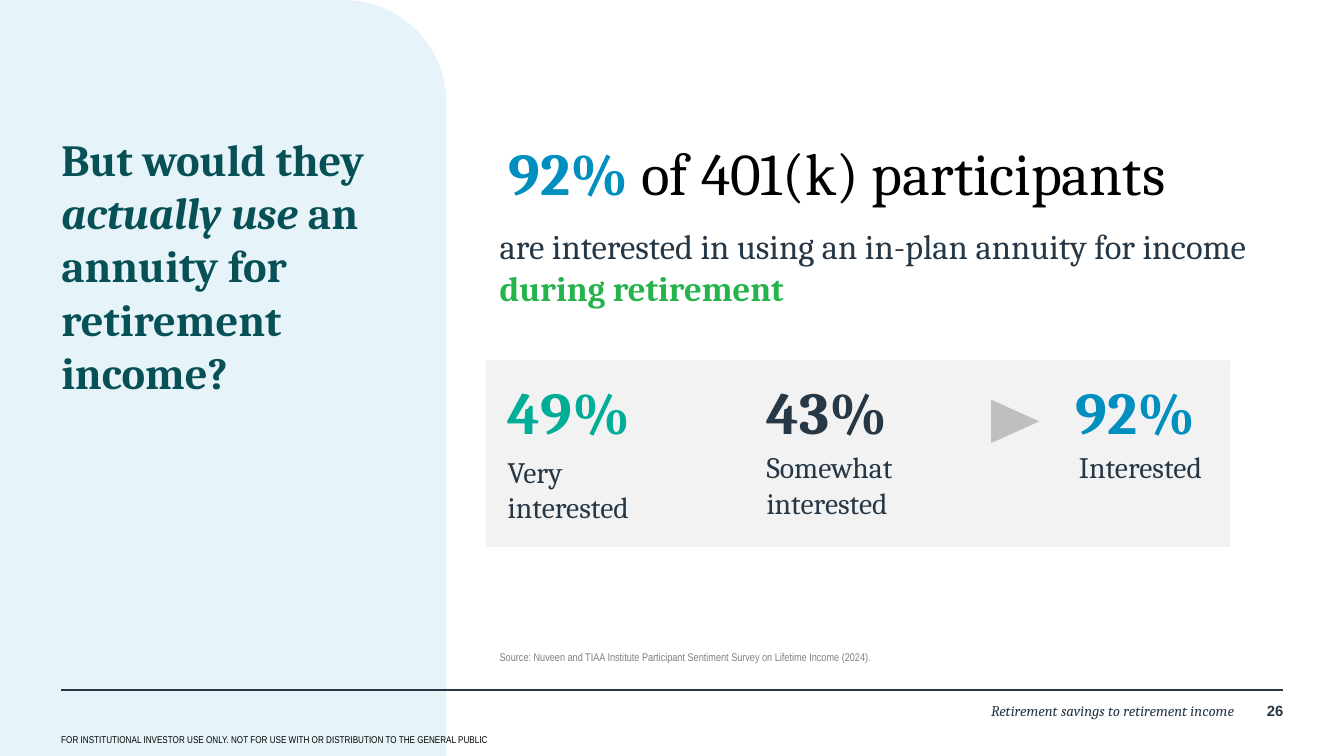
import pptx
import pptx.util
import pptx.dml.color
import pptx.enum.text
import pptx.enum.shapes
import pptx.oxml
import pptx.oxml.ns
from dataclasses import dataclass

Cm, Pt = pptx.util.Cm, pptx.util.Pt
Align, Anchor = pptx.enum.text.PP_ALIGN, pptx.enum.text.MSO_ANCHOR
Shape = pptx.enum.shapes.MSO_SHAPE


@dataclass(frozen=True)
class Theme:
    serif: str = "Cambria"
    sans: str = "Arial"
    narrow: str = "Arial Narrow"
    ink: str = "263746"
    black: str = "000000"
    deep: str = "075156"
    blue: str = "008FBE"
    green: str = "25B34B"
    teal: str = "00AD97"
    gray: str = "808080"
    arrow: str = "BFBFBF"
    panel: str = "F2F2F2"
    pale: str = "E6F4F9"
    big: int = 48
    title: int = 36
    body: int = 28
    label: int = 24
    foot: int = 12
    source: int = 9
    legal: int = 8


T = Theme()

# Content: each run is (text, colour, style), style being "b", "i", both or none
TITLE = [("But would they ", T.deep, "b"), ("actually use ", T.deep, "bi"),
         ("an annuity for retirement income?", T.deep, "b")]
HEAD = [("92% ", T.blue, "b"), ("of 401(k) participants", T.black, "")]
BODY = [("are interested in using an in-plan annuity for income ", T.ink, ""),
        ("during retirement", T.green, "b")]
SOURCE = [("Source: Nuveen and TIAA Institute Participant Sentiment Survey "
           "on Lifetime Income (2024).", T.gray, "")]
LEGAL = [("FOR INSTITUTIONAL INVESTOR USE ONLY. NOT FOR USE WITH OR "
          "DISTRIBUTION TO THE GENERAL PUBLIC", T.black, "")]
FOOT = [("Retirement savings to retirement income", T.ink, "i")]
PAGE = [("26", T.ink, "b")]

# Share, colour, label, left edge, label shift right, label top
SHARES = [("49%", T.teal, "Very \ninterested", 14.5, 0, 12.95),
          ("43%", T.ink, "Somewhat interested", 21.89, 0, 12.83),
          ("92%", T.blue, "Interested", 30.71, 0.1, 12.83)]

WIDE, HIGH = 38.38, 21.59
LEFT, RIGHT = 1.75, 36.65      # outer margins
MAIN, TOP = 14.27, 3.76        # main column and first text row
SPAN = RIGHT - MAIN


def rgb(code):
    return pptx.dml.color.RGBColor.from_string(code)


def place(shape, box):
    shape.left, shape.top, shape.width, shape.height = map(Cm, box)


def write(shape, runs, size, face=T.serif, align=Align.LEFT,
          anchor=Anchor.TOP, inset=(0, 0)):
    frame = shape.text_frame
    frame.word_wrap = True
    frame.auto_size = pptx.enum.text.MSO_AUTO_SIZE.NONE
    frame.vertical_anchor = anchor
    frame.margin_left = frame.margin_right = Cm(inset[0])
    frame.margin_top = frame.margin_bottom = Cm(inset[1])
    para = frame.paragraphs[0]
    para.alignment = align
    for text, tint, style in runs:
        for row, piece in enumerate(text.split("\n")):
            if row:
                para.add_line_break()
            run = para.add_run()
            run.text = piece
            font = run.font
            font.name, font.size = face, Pt(size)
            font.bold, font.italic = "b" in style, "i" in style
            font.color.rgb = rgb(tint)
    return para


def label(slide, box, *text, **look):
    return write(slide.shapes.add_textbox(*map(Cm, box)), *text, **look)


def block(slide, kind, box, tint):
    shape = slide.shapes.add_shape(kind, *map(Cm, box))
    shape.shadow.inherit = False
    shape.fill.solid()
    shape.fill.fore_color.rgb = rgb(tint)
    shape.line.fill.background()
    return shape


def main():
    deck = pptx.Presentation()
    deck.slide_width, deck.slide_height = Cm(WIDE), Cm(HIGH)
    slide = deck.slides.add_slide(deck.slide_layouts[1])
    title, body = slide.shapes.title, slide.placeholders[1]

    # Side panel and footer
    side = block(slide, Shape.ROUND_1_RECTANGLE, (0, 0, 12.75, HIGH), T.pale)
    side.adjustments[0] = 0.23
    rule = slide.shapes.add_connector(
        pptx.enum.shapes.MSO_CONNECTOR.STRAIGHT,
        Cm(LEFT), Cm(19.71), Cm(RIGHT), Cm(19.71))
    rule.line.color.rgb = rgb(T.ink)
    rule.line.width = Pt(2)
    rule.element.spPr.append(pptx.oxml.parse_xml(
        "<a:effectLst %s/>" % pptx.oxml.ns.nsdecls("a")))
    label(slide, (RIGHT - 1.02, 20.04, 1.02, 0.84), PAGE, T.foot, T.sans,
          align=Align.RIGHT)
    label(slide, (13.51, 20.04, 21.74, 1.02), FOOT, T.foot, align=Align.RIGHT)
    label(slide, (1.5, 20.83, 28.07, 0.61), LEGAL, T.legal, T.narrow,
          inset=(0.25, 0.13))

    # Panel for the shares
    block(slide, Shape.RECTANGLE, (13.87, 10.29, 21.26, 5.33), T.panel)

    # Title and statement, brought in front of the panels
    for holder in (title, body):
        holder.element.getparent().append(holder.element)
    place(title, (LEFT, TOP, 9.78, 7.7))
    write(title, TITLE, T.title)
    place(body, (MAIN, 6.43, SPAN, 3.2))
    para = write(body, BODY, T.body)
    props = para._p.get_or_add_pPr()
    props.set("marL", "0")
    props.set("indent", "0")
    props.append(pptx.oxml.parse_xml(
        "<a:buNone %s/>" % pptx.oxml.ns.nsdecls("a")))
    para.space_before = Pt(0)
    label(slide, (MAIN, TOP, 21.87, 2.31), HEAD, T.big, inset=(0.25, 0.13))
    label(slide, (MAIN, 17.91, SPAN, 1.04), SOURCE, T.source, T.narrow,
          anchor=Anchor.BOTTOM)

    # Shares and their labels
    for share, tint, name, left, shift, top in SHARES:
        label(slide, (left, 10.72, 5.26, 1.37), [(share, tint, "b")], T.big)
        label(slide, (left + shift, top, 7, 0.97), [(name, T.ink, "")],
              T.label)
    arrow = block(slide, Shape.ISOSCELES_TRIANGLE,
                  (28.37, 11.35, 1.24, 1.37), T.arrow)
    arrow.rotation = 90

    deck.save("out.pptx")


if __name__ == "__main__":
    main()
